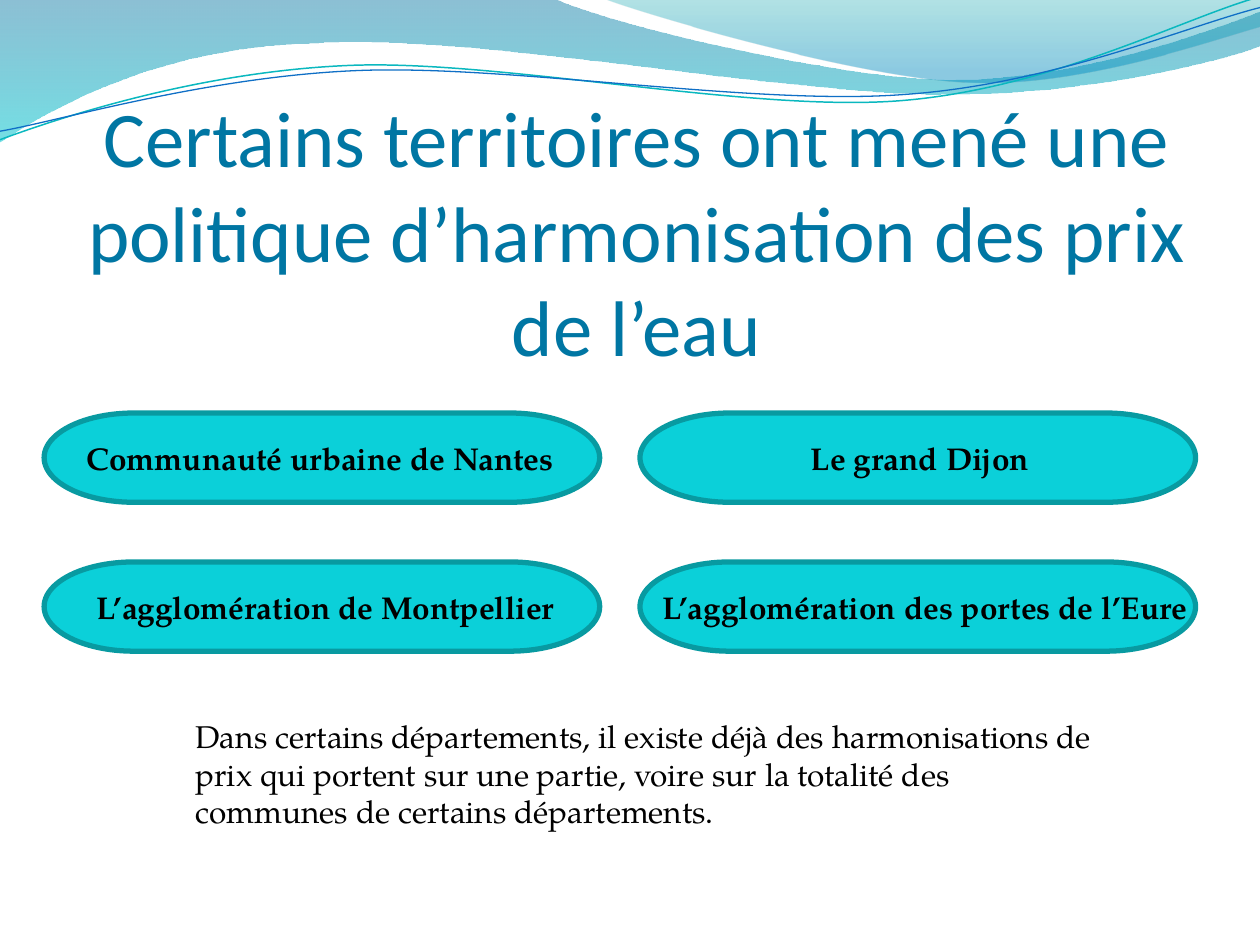
from lxml.etree import SubElement
from pptx import Presentation
from pptx.dml.color import RGBColor
from pptx.enum.shapes import MSO_SHAPE
from pptx.enum.text import MSO_ANCHOR, MSO_AUTO_SIZE, PP_ALIGN
from pptx.oxml.ns import qn
from pptx.util import Pt

BODY_FONT = "TeX Gyre Pagella"
CURVE_ROTATION = 357.3

# Wave outlines in points: a pair is a straight step, six numbers a Bézier curve
UPPER_WAVE = [
    (0, 0), (316.8, -0.7),
    (342.7, 12.2, 478.1, 45.4, 545.8, 45.4), (614.2, 45.4, 689.8, 18.7, 720, 6.5),
    (720.7, 25.9),
    (707.8, 31.7, 626.4, 54.7, 537.1, 54), (447.8, 54, 275, 20.2, 185, 24.5),
    (92.9, 25.9, 33.1, 59.8, -0.7, 81.4),
]
RIGHT_WAVE = [
    (344.9, -0.7),
    (366.5, 7.9, 491, 44.6, 553.7, 46.8), (616.3, 49.7, 691.9, 23, 720, 15.1),
    (720, 0),
]
# Thin curves, before their rotation
TEAL_CURVE = [
    (-1.4, 62.9), (33.8, 51.7, 114.1, 29.4, 199.8, 29.9),
    (284.9, 30.3, 425.8, 67.3, 512.4, 64.9), (599, 62.4, 676.4, 25.7, 720.2, 15.5),
]
BLUE_CURVE = [
    (-1.1, 58), (32.9, 53.8, 118.3, 32.5, 204.1, 33),
    (290.6, 33.4, 428.9, 63.8, 515.5, 61.4), (601.3, 59.6, 678.4, 30.1, 721.4, 21.3),
]

# Column and row of each pill, from back to front
PILL_CELLS = [(0, 0), (0, 1), (1, 1), (1, 0)]
# Territory name, row, label left and label width
LABELS = [
    ("Communauté urbaine de Nantes", 0, 42.5, 289.5),
    ("Le grand Dijon", 0, 456.3, 142),
    ("L’agglomération de Montpellier", 1, 48.2, 294.5),
    ("L’agglomération des portes de l’Eure", 1, 371.5, 323.3),
]


def color(value):
    return RGBColor.from_string(value)


def add_outline(slide, steps, left, top, close):
    """Draw the steps as a freeform, joining each three points of a curve."""
    points = [(Pt(left + x), Pt(top + y))
              for step in steps for x, y in zip(step[::2], step[1::2])]
    builder = slide.shapes.build_freeform(*points[0])
    builder.add_line_segments(points[1:], close=close)
    shape = builder.convert_to_shape()
    shape.shadow.inherit = False

    segments = iter(list(shape.element.iter(qn("a:lnTo"))))
    for step in steps[1:]:
        segment = next(segments)
        if len(step) == 6:
            segment.tag = qn("a:cubicBezTo")
            for _ in range(2):
                extra = next(segments)
                segment.append(extra[0])
                extra.getparent().remove(extra)
    return shape


def add_waves(slide, left, top):
    # Translucent gradient areas; each stop is position, colour, opacity
    for steps, stops in (
        (UPPER_WAVE, [(0, "0074A1", 45), (1, "00C6CF", 55)]),
        (RIGHT_WAVE, [(0, "00A1A9", 30), (0.8, "008BBF", 45)]),
    ):
        wave = add_outline(slide, steps, left, top, close=True)
        wave.line.fill.background()
        wave.fill.gradient()
        wave.fill.gradient_angle = 270
        for stop, (position, value, _) in zip(wave.fill.gradient_stops, stops):
            stop.position = position
            stop.color.rgb = color(value)
        color_elements = wave.element.spPr.find(qn("a:gradFill")).iter(qn("a:srgbClr"))
        for element, (_, _, opacity) in zip(list(color_elements), stops):
            SubElement(element, qn("a:alpha")).set("val", str(opacity * 1000))

    # Thin curves
    for steps, value, width in ((TEAL_CURVE, "0AB8BF", 0.85), (BLUE_CURVE, "0F6FC6", 0.75)):
        curve = add_outline(slide, steps, left, top, close=False)
        curve.rotation = CURVE_ROTATION
        curve.fill.background()
        curve.line.color.rgb = color(value)
        curve.line.width = Pt(width)


def add_text(slide, text, left, top, width, height, size=18, font=BODY_FONT,
             value="000000", bold=False):
    box = slide.shapes.add_textbox(Pt(left), Pt(top), Pt(width), Pt(height))
    box.text_frame.word_wrap = True
    box.text_frame.auto_size = MSO_AUTO_SIZE.SHAPE_TO_FIT_TEXT
    paragraph = box.text_frame.paragraphs[0]
    paragraph.text = text
    paragraph.font.size = Pt(size)
    paragraph.font.name = font
    paragraph.font.bold = bold
    paragraph.font.color.rgb = color(value)
    return box


def add_title(slide, text, left, top, width, height):
    frame = add_text(slide, text, left, top, width, height, 45, "Calibri", "0076A3").text_frame
    frame.auto_size = MSO_AUTO_SIZE.NONE
    frame.vertical_anchor = MSO_ANCHOR.BOTTOM
    frame.margin_left = frame.margin_right = frame.margin_bottom = 0
    frame.paragraphs[0].alignment = PP_ALIGN.CENTER


def add_territories(slide, left, top, width, height):
    pill_width, pill_height = 317.5, 51
    column_step, row_step = width - pill_width, height - pill_height

    # Pills
    for column, row in PILL_CELLS:
        pill = slide.shapes.add_shape(
            MSO_SHAPE.FLOWCHART_TERMINATOR, Pt(left + column * column_step),
            Pt(top + row * row_step), Pt(pill_width), Pt(pill_height))
        pill.shadow.inherit = False
        pill.fill.solid()
        pill.fill.fore_color.rgb = color("0BD0D9")
        pill.line.color.rgb = color("089AA1")
        pill.line.width = Pt(3)

    # Names
    for name, row, label_left, label_width in LABELS:
        add_text(slide, name, label_left, top + row * row_step + 11.4, label_width, 29,
                 bold=True)


def main():
    presentation = Presentation()
    presentation.slide_width, presentation.slide_height = Pt(720), Pt(540)
    slide = presentation.slides.add_slide(presentation.slide_layouts[6])
    add_waves(slide, 0, 0)
    add_title(slide, "Certains territoires ont mené une politique d’harmonisation "
              "des prix de l’eau", 36.7, 122.8, 653.8, 90)
    add_territories(slide, 25.2, 236, 658, 136.1)
    add_text(slide, "Dans certains départements, il existe déjà des harmonisations de "
             "prix qui portent sur une partie, voire sur la totalité des communes de "
             "certains départements.", 104.7, 406, 533, 72.7)
    presentation.save("out.pptx")


if __name__ == "__main__":
    main()
